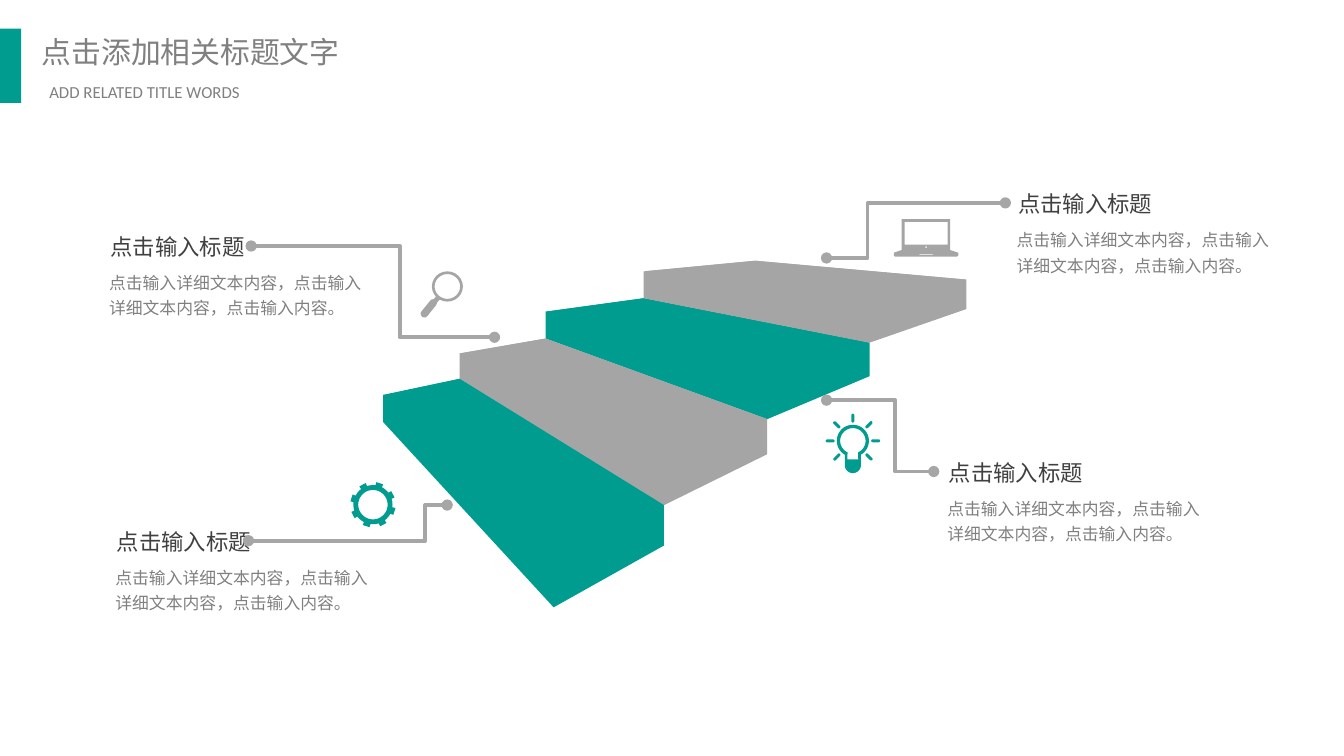
"""Build a slide with a four-step staircase, four icons and four callouts."""
from dataclasses import dataclass
from math import cos, radians, sin

from lxml import etree
from pptx import Presentation
from pptx import util as u
from pptx.dml.color import RGBColor
from pptx.enum import shapes, text
from pptx.oxml.ns import qn


@dataclass(frozen=True)
class Theme:
    teal: str = "009C8F"
    grey: str = "A5A5A5"
    line: str = "A6A6A6"
    dark: str = "404040"
    muted: str = "808080"
    chinese: str = "Noto Sans CJK SC"
    latin: str = "Calibri"
    title: float = 16
    heading: float = 12
    small: float = 9


THEME = Theme()
TITLE = "点击添加相关标题文字"
SUBTITLE = "ADD RELATED TITLE WORDS"
HEADING = "点击输入标题"
DETAIL = "点击输入详细文本内容，点击输入详细文本内容，点击输入内容。"

CALLOUTS = [(57.8, 125.1), (544, 102.4), (506.9, 246.2), (61.2, 283.1)]

LEADERS = [
    ((265, 180.7), (134.6, 131.8), 0.39),
    ((442.8, 214.4), (500.2, 252.6), 0.64),
    ((442.8, 138.2), (538.6, 108.7), 0.23),
    ((239.6, 270.6), (133.2, 289.7), 0.11),
]

STEPS = [
    (THEME.teal, [(292.3, 167), (292.3, 181.4), (411, 224.6), (465.8, 201.6),
                  (465.8, 183.6), (344.9, 159.8)], (411, 201.6)),
    (THEME.grey, [(344.9, 145.4), (344.9, 159.8), (465.8, 183.6), (517.7, 165.6),
                  (517.7, 149.8), (404.6, 139.7)], (465.8, 162.7)),
    (THEME.grey, [(246.2, 189.4), (246.2, 203), (355.7, 270.7), (411, 243.4),
                  (411, 224.6), (292.3, 181.4)], (355, 247.7)),
    (THEME.teal, [(205.2, 211.7), (205.2, 226.1), (296.6, 325.4), (355.7, 292.3),
                  (355.7, 270.7), (246.2, 203)], (296.6, 299.5)),
]

LAPTOP_BASE = [(478.8, 135.4), (483.1, 133.9), (509, 133.9), (513.4, 135.4),
               (513.4, 136.8), (512.6, 137.5), (479.5, 137.5), (478.8, 136.8)]
LENS_HANDLE = [(231.1, 165.6), (229, 164.2), (234, 158.4), (236.2, 159.8)]


def box(left, top, right, bottom):
    return [(left, top), (right, top), (right, bottom), (left, bottom)]


def polar(centre, radius, angle):
    turn = radians(angle)
    return centre[0] + radius * cos(turn), centre[1] + radius * sin(turn)


def arc(centre, radius, start, end, parts=36):
    return [polar(centre, radius, start + (end - start) * i / parts) for i in range(parts + 1)]


def paint(shape, colour):
    shape.shadow.inherit = False
    shape.fill.solid()
    shape.fill.fore_color.rgb = RGBColor.from_string(colour)
    shape.line.fill.background()
    return shape


def add_outline(slide, colour, *contours):
    emu = [[(u.Pt(x), u.Pt(y)) for x, y in contour] for contour in contours]
    builder = slide.shapes.build_freeform(*emu[0][0])
    builder.add_line_segments(emu[0][1:], close=True)
    for contour in emu[1:]:
        builder.move_to(*contour[0])
        builder.add_line_segments(contour[1:], close=True)
    return paint(builder.convert_to_shape(), colour)


def add_preset(slide, kind, colour, left, top, width, height):
    shape = slide.shapes.add_shape(kind, u.Pt(left), u.Pt(top), u.Pt(width), u.Pt(height))
    return paint(shape, colour)


def add_bar(slide, colour, centre, width, height, angle):
    shape = add_preset(slide, shapes.MSO_SHAPE.ROUNDED_RECTANGLE, colour,
                       centre[0] - width / 2, centre[1] - height / 2, width, height)
    shape.adjustments[0] = 0.5
    shape.rotation = angle


def add_text(slide, words, place, size, colour, font=THEME.chinese, inset=(0, 0),
             wrap=True, anchor=text.MSO_ANCHOR.TOP, spacing=None, align=None):
    shape = slide.shapes.add_textbox(*(u.Pt(value) for value in place))
    frame = shape.text_frame
    frame.word_wrap = wrap
    frame.vertical_anchor = anchor
    frame.margin_left = frame.margin_right = u.Pt(inset[0])
    frame.margin_top = frame.margin_bottom = u.Pt(inset[1])
    paragraph = frame.paragraphs[0]
    paragraph.alignment = align
    if spacing:
        paragraph.line_spacing = u.Pt(spacing)
    run = paragraph.add_run()
    run.text = words
    run.font.size = u.Pt(size)
    run.font.name = font
    run.font.color.rgb = RGBColor.from_string(colour)
    etree.SubElement(run.font._element, qn("a:ea"), typeface=font)


def add_leader(slide, start, end, bend):
    connector = slide.shapes.add_connector(
        shapes.MSO_CONNECTOR.ELBOW, *(u.Pt(value) for value in start + end))
    connector.line.width = u.Pt(2)
    connector.line.color.rgb = RGBColor.from_string(THEME.line)
    properties = connector._element.spPr
    guides = properties.find(qn("a:prstGeom")).get_or_add_avLst()
    etree.SubElement(guides, qn("a:gd"), name="adj1", fmla=f"val {round(bend * 100000)}")
    line = properties.find(qn("a:ln"))
    for tag in ("a:headEnd", "a:tailEnd"):
        etree.SubElement(line, qn(tag), type="oval")
    etree.SubElement(properties, qn("a:effectLst"))


def add_magnifier(slide):
    ring = add_preset(slide, shapes.MSO_SHAPE.DONUT, THEME.grey, 231.4, 145.4, 16.6, 16.2)
    ring.adjustments[0] = 0.09
    add_outline(slide, THEME.grey, LENS_HANDLE)
    add_bar(slide, THEME.grey, (229.7, 165.2), 4, 11.5, 39)


def add_laptop(slide):
    add_outline(slide, THEME.grey, box(483.1, 117.4, 509, 133.9), box(484.6, 118.8, 507.6, 131),
                box(495.7, 132, 496.5, 132.8), LAPTOP_BASE, box(492.5, 136.1, 499.7, 136.6))


def add_bulb(slide):
    centre = (456.9, 236.2)
    glass = arc(centre, 8.6, 120, 420) + arc((456.9, 249.2), 4.3, 0, 180)
    hollow = arc(centre, 6.8, 115, 425) + [(459.8, 246.2), (454, 246.2)]
    add_outline(slide, THEME.teal, glass, hollow)
    for angle in range(135, 450, 45):
        add_bar(slide, THEME.teal, polar(centre, 12.2, angle), 4.8, 1.6, angle)


def add_gear(slide):
    centre = (199.8, 270.4)
    profile = [(-9, 12.2), (9, 12.2), (10, 10.5), (18, 10.5), (27, 10.5), (35, 10.5)]
    rim = [polar(centre, radius, tooth * 45 - 72.5 + offset)
           for tooth in range(8) for offset, radius in profile]
    add_outline(slide, THEME.teal, rim, arc(centre, 7.9, 0, 360))


def main():
    presentation = Presentation()
    presentation.slide_width, presentation.slide_height = u.Pt(720), u.Pt(405)
    slide = presentation.slides.add_slide(presentation.slide_layouts[6])

    add_preset(slide, shapes.MSO_SHAPE.RECTANGLE, THEME.teal, 0, 15.4, 11.4, 39.8)
    add_text(slide, TITLE, (17, 15.1, 172.8, 25.2), THEME.title, THEME.muted,
             inset=(5.4, 2.7), wrap=False)
    add_text(slide, SUBTITLE, (21, 41, 160.6, 16.6), THEME.small, THEME.muted, THEME.latin,
             inset=(5.4, 2.7), align=text.PP_ALIGN.JUSTIFY)

    for add_icon in (add_magnifier, add_laptop, add_bulb, add_gear):
        add_icon(slide)
    for colour, body, corner in STEPS:
        add_outline(slide, colour, body)
        add_outline(slide, colour, [body[0], body[5], body[4], corner])
    for left, top in CALLOUTS:
        add_text(slide, DETAIL, (left + 0.6, top + 18.2, 142, 30.2), THEME.small,
                 THEME.muted, spacing=13.5)
        add_text(slide, HEADING, (left, top, 87, 13.7), THEME.heading, THEME.dark,
                 inset=(1.4, 1.4), anchor=text.MSO_ANCHOR.MIDDLE)
    for start, end, bend in LEADERS:
        add_leader(slide, start, end, bend)
    presentation.save("out.pptx")


if __name__ == "__main__":
    main()
